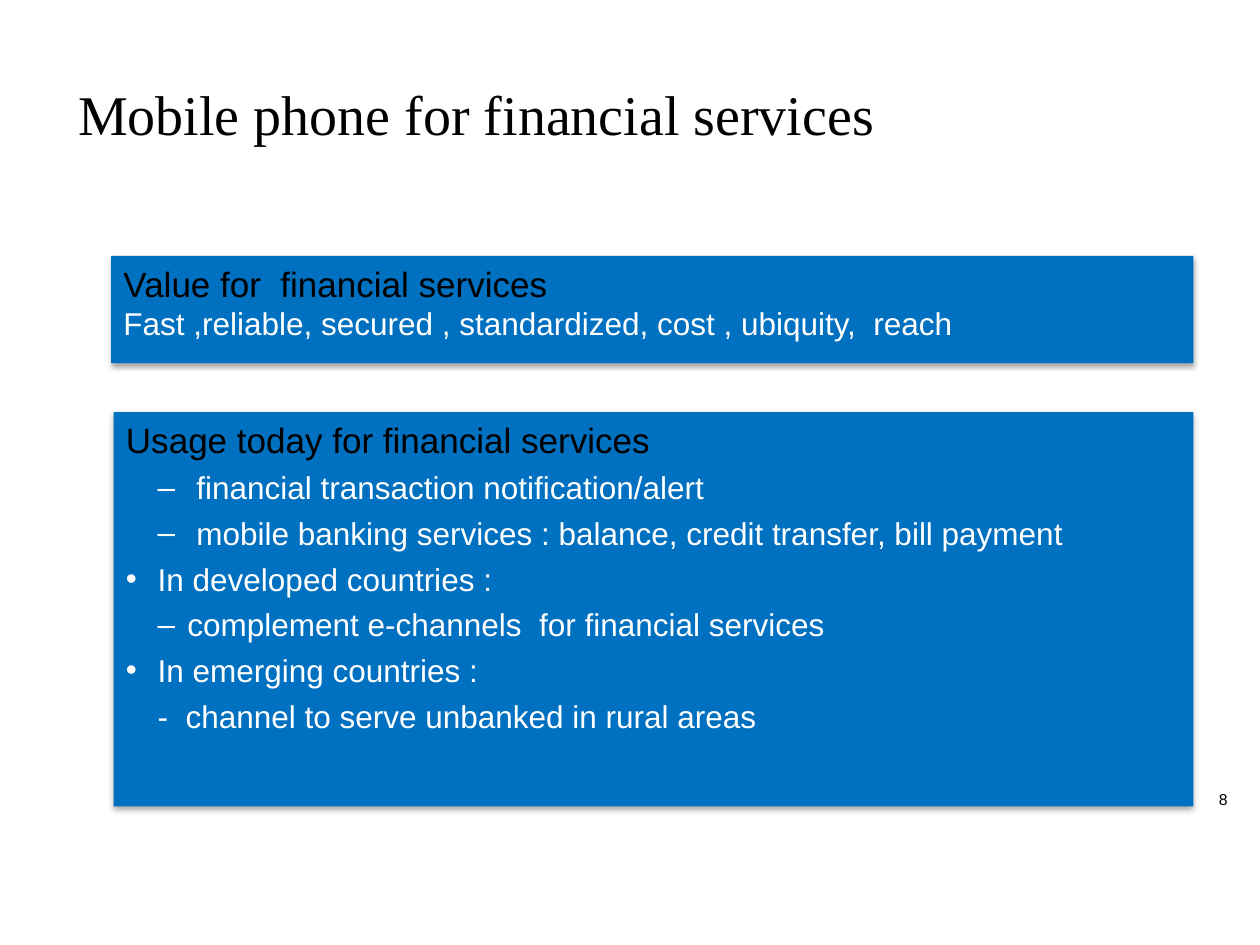
from lxml.etree import SubElement as Sub
from pptx import Presentation
from pptx.dml.color import RGBColor as RGB
from pptx.enum.shapes import MSO_SHAPE as Shape
from pptx.enum.text import MSO_ANCHOR as Anchor, PP_ALIGN as Align
from pptx.oxml.ns import qn
from pptx.util import Cm, Pt

TITLE = "Mobile phone for financial services"
NUMBER = "8"

# Each line: style name, text
VALUE = [
    ("head", "Value for  financial services"),
    ("plain", "Fast ,reliable, secured , standardized, cost , ubiquity,  reach"),
]
USAGE = [
    ("head", "Usage today for financial services"),
    ("wide", "financial transaction notification/alert"),
    ("wide", "mobile banking services : balance, credit transfer, bill payment"),
    ("dot", "In developed countries :"),
    ("dash", "complement e-channels  for financial services"),
    ("dot", "In emerging countries :"),
    ("inset", "-  channel to serve unbanked in rural areas"),
]

THEME = {
    "black": RGB(0, 0, 0), "white": RGB(255, 255, 255), "blue": RGB(0, 0x70, 0xC0),
    "serif": "Times New Roman", "sans": "Arial",
    "title": Pt(32), "head": Pt(20), "body": Pt(18), "number": Pt(9),
}
# Style: bullet, left margin and first-line indent in cm
STYLES = {
    "head": (None, 0, 0),
    "plain": (None, 0, 0),
    "inset": (None, 0.64, 0),
    "dot": ("•", 0.64, -0.64),
    "dash": ("–", 1.24, -0.6),
    "wide": ("–", 1.42, -0.78),
}
# Places in cm: left, top, width, height
PLACES = {
    "title": (1.32, 1.47, 22.5, 3.18),
    "usage": (2.29, 8.31, 21.77, 7.95),
    "number": (22.89, 15.8, 2.11, 0.64),
    "value": (2.24, 5.16, 21.82, 2.16),
}


def spot(name):
    return [Cm(n) for n in PLACES[name]]


def style(para, size, color, face="sans"):
    font = para.font
    font.size, font.name = THEME[size], THEME[face]
    font.color.rgb = THEME[color]


def indent(para, mark, left, first):
    props = para._p.get_or_add_pPr()
    props.set("marL", str(Cm(left)))
    props.set("indent", str(Cm(first)))
    if mark:
        Sub(props, qn("a:buFont"), typeface=THEME["sans"])
        Sub(props, qn("a:buChar"), char=mark)
    else:
        Sub(props, qn("a:buNone"))


def shade(shape):
    """Give the shape a soft shadow straight below it."""
    shape.shadow.inherit = False
    effects = shape._element.spPr.find(qn("a:effectLst"))
    outer = Sub(effects, qn("a:outerShdw"), blurRad="40000", dist="23000",
                dir="5400000", rotWithShape="0")
    color = Sub(outer, qn("a:srgbClr"), val=str(THEME["black"]))
    Sub(color, qn("a:alpha"), val="35000")


def panel(slide, name, lines, gap):
    box = slide.shapes.add_shape(Shape.RECTANGLE, *spot(name))
    box.fill.solid()
    box.fill.fore_color.rgb = THEME["blue"]
    box.line.fill.background()
    shade(box)
    frame = box.text_frame
    frame.word_wrap = True
    frame.vertical_anchor = Anchor.TOP
    for i, (kind, text) in enumerate(lines):
        para = frame.add_paragraph() if i else frame.paragraphs[0]
        para.text = text
        para.alignment = Align.LEFT
        if i:
            para.space_before = gap
        indent(para, *STYLES[kind])
        style(para, *(("head", "black") if kind == "head" else ("body", "white")))


def main():
    deck = Presentation()
    deck.slide_width, deck.slide_height = Cm(25.4), Cm(19.05)
    slide = deck.slides.add_slide(deck.slide_layouts[5])

    title = slide.shapes.title
    title.left, title.top, title.width, title.height = spot("title")
    title.text_frame.text = TITLE
    title.text_frame.vertical_anchor = Anchor.TOP
    para = title.text_frame.paragraphs[0]
    para.alignment = Align.LEFT
    style(para, "title", "black", "serif")

    panel(slide, "usage", USAGE, Pt(4.5))

    frame = slide.shapes.add_textbox(*spot("number")).text_frame
    frame.word_wrap = True
    frame.vertical_anchor = Anchor.MIDDLE
    frame.text = NUMBER
    para = frame.paragraphs[0]
    para.alignment = Align.RIGHT
    style(para, "number", "black")

    panel(slide, "value", VALUE, Pt(0))
    deck.save("out.pptx")


if __name__ == "__main__":
    main()
